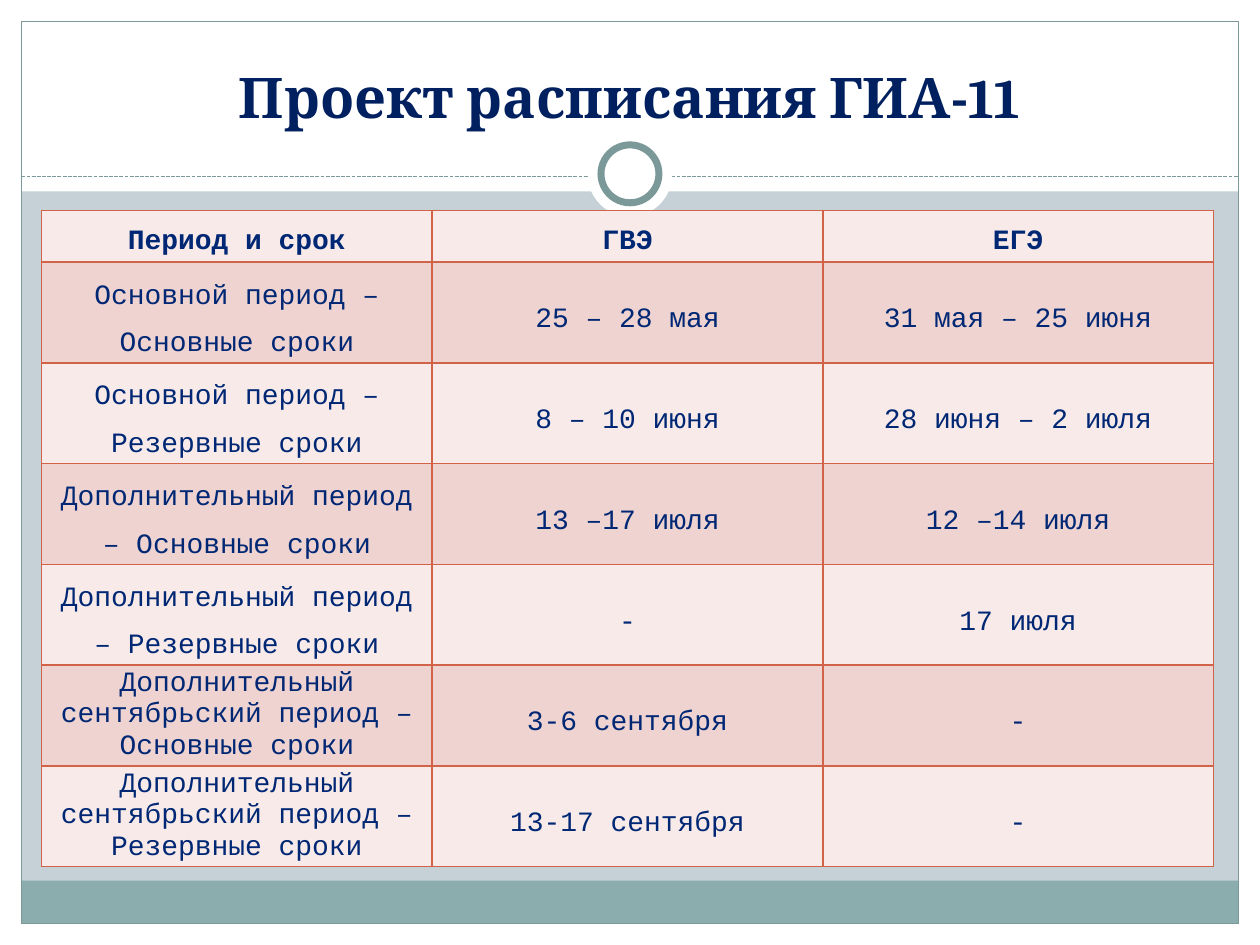
import pptx
import pptx.util
import pptx.dml.color
import pptx.enum.dml
import pptx.enum.shapes
import pptx.enum.text
import pptx.oxml
import pptx.oxml.ns

RGBColor = pptx.dml.color.RGBColor
SHAPE = pptx.enum.shapes.MSO_SHAPE
ANCHOR = pptx.enum.text.MSO_ANCHOR
CENTER = pptx.enum.text.PP_ALIGN.CENTER
Inches, Pt = pptx.util.Inches, pptx.util.Pt

WHITE = RGBColor(0xFF, 0xFF, 0xFF)
BACKGROUND = RGBColor(0xC5, 0xD1, 0xD7)
BAND = RGBColor(0x8C, 0xAD, 0xAE)
FRAME = RGBColor(0x7C, 0x99, 0x9A)
TITLE_COLOR = RGBColor(0x00, 0x20, 0x60)
TEXT_COLOR = RGBColor(0x00, 0x27, 0x74)
BORDER = RGBColor(0xD1, 0x63, 0x49)
ROW_FILLS = (RGBColor(0xF7, 0xEA, 0xE9), RGBColor(0xEE, 0xD3, 0xD0))

WIDTH, HEIGHT = 10, 7.5
MARGIN = 0.17
INNER_W, INNER_H = WIDTH - 2 * MARGIN, HEIGHT - 2 * MARGIN
RULE_Y = 1.4
COL_W, ROW_H = 3.1, 0.41

TITLE_FONT = {"name": "Cambria", "size": Pt(32), "bold": True}
CELL_FONT = {"name": "Courier New", "size": Pt(16), "bold": False}

SCHEDULE = [
    ("Период и срок", "ГВЭ", "ЕГЭ"),
    ("Основной период – Основные сроки", "25 – 28 мая", "31 мая – 25 июня"),
    ("Основной период – Резервные сроки", "8 – 10 июня", "28 июня – 2 июля"),
    ("Дополнительный период – Основные сроки", "13 –17 июля", "12 –14 июля"),
    ("Дополнительный период – Резервные сроки", "-", "17 июля"),
    ("Дополнительный сентябрьский период – Основные сроки", "3-6 сентября", "-"),
    ("Дополнительный сентябрьский период – Резервные сроки", "13-17 сентября", "-"),
]
SINGLE_SPACED = {(5, 0), (6, 0)}


def add_panel(s, kind, x, y, w, h, fill=None, line=None, weight=0.75):
    sp = s.shapes.add_shape(kind, Inches(x), Inches(y), Inches(w), Inches(h))
    sp.shadow.inherit = False
    if fill is None:
        sp.fill.background()
    else:
        sp.fill.solid()
        sp.fill.fore_color.rgb = fill
    if line is None:
        sp.line.fill.background()
    else:
        sp.line.color.rgb = line
        sp.line.width = Pt(weight)


def add_disc(s, y, size, **style):
    add_panel(s, SHAPE.OVAL, (WIDTH - size) / 2, y, size, size, **style)


def add_dashed_rule(s, y):
    c = s.shapes.add_connector(pptx.enum.shapes.MSO_CONNECTOR.STRAIGHT, Inches(MARGIN),
                               Inches(y), Inches(WIDTH - MARGIN), Inches(y))
    c.line.color.rgb = FRAME
    c.line.width = Pt(0.75)
    c.line.dash_style = pptx.enum.dml.MSO_LINE.SQUARE_DOT
    c._element.spPr.append(pptx.oxml.parse_xml(
        f'<a:effectLst {pptx.oxml.ns.nsdecls("a")}/>'))


def write(tf, text, color, font, spacing=None):
    p = tf.paragraphs[0]
    p.alignment = CENTER
    if spacing:
        p.line_spacing = spacing
    r = p.add_run()
    r.text = text
    for name, value in font.items():
        setattr(r.font, name, value)
    r.font.color.rgb = color


def add_title(s, text):
    box = s.shapes.add_textbox(Inches(0.33), Inches(0.25), Inches(9.33), Inches(0.83))
    tf = box.text_frame
    tf.word_wrap = True
    tf.vertical_anchor = ANCHOR.BOTTOM
    write(tf, text, TITLE_COLOR, TITLE_FONT)


def set_borders(cell):
    # Border lines come before the fill in the cell properties
    tc_pr = cell._tc.get_or_add_tcPr()
    for i, side in enumerate(("lnL", "lnR", "lnT", "lnB")):
        tc_pr.insert(i, pptx.oxml.parse_xml(
            f'<a:{side} {pptx.oxml.ns.nsdecls("a")} w="{Pt(1)}"><a:solidFill>'
            f'<a:srgbClr val="{BORDER}"/></a:solidFill></a:{side}>'))


def add_schedule(s, rows):
    n_rows, n_cols = len(rows), len(rows[0])
    table = s.shapes.add_table(n_rows, n_cols, Inches(0.33), Inches(1.67),
                               Inches(n_cols * COL_W), Inches(n_rows * ROW_H)).table
    for i, row in enumerate(rows):
        for j, text in enumerate(row):
            cell = table.cell(i, j)
            cell.margin_top = cell.margin_bottom = 0
            cell.margin_left = cell.margin_right = Inches(0.1)
            cell.vertical_anchor = ANCHOR.MIDDLE if i else ANCHOR.TOP
            cell.fill.solid()
            cell.fill.fore_color.rgb = ROW_FILLS[i % 2]
            set_borders(cell)
            write(cell.text_frame, text, TEXT_COLOR, {**CELL_FONT, "bold": i == 0},
                  None if (i, j) in SINGLE_SPACED else 1.5)


def main():
    prs = pptx.Presentation()
    prs.slide_width, prs.slide_height = Inches(WIDTH), Inches(HEIGHT)
    s = prs.slides.add_slide(prs.slide_layouts[6])
    s.background.fill.solid()
    s.background.fill.fore_color.rgb = BACKGROUND

    # White edges and header
    for area in ((0, HEIGHT - MARGIN, WIDTH, MARGIN), (0, 0, WIDTH, 1.52),
                 (0, 0, MARGIN, HEIGHT), (WIDTH - MARGIN, 0, MARGIN, HEIGHT)):
        add_panel(s, SHAPE.RECTANGLE, *area, fill=WHITE)

    # Bottom band, frame and dashed rule
    add_panel(s, SHAPE.RECTANGLE, MARGIN, 6.99, INNER_W, 0.34, fill=BAND)
    add_panel(s, SHAPE.RECTANGLE, MARGIN, MARGIN, INNER_W, INNER_H, line=FRAME)
    add_dashed_rule(s, RULE_Y)

    # Ring on the rule
    add_disc(s, 1.05, 0.67, fill=WHITE)
    add_disc(s, 1.15, 0.46, fill=WHITE, line=FRAME, weight=4)

    # Title and schedule
    add_title(s, "Проект расписания ГИА-11")
    add_schedule(s, SCHEDULE)
    prs.save("out.pptx")


if __name__ == "__main__":
    main()
